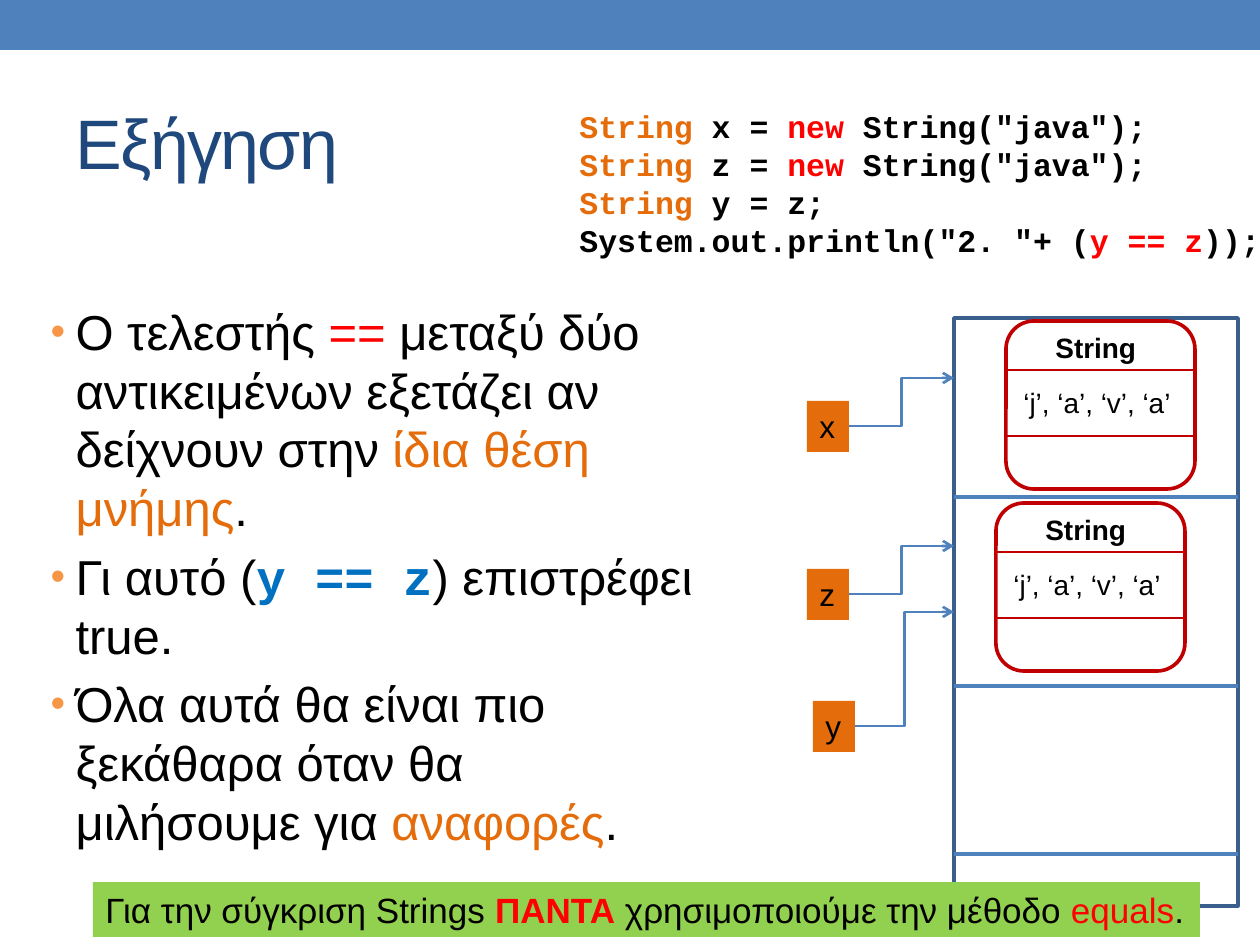
import pptx
import pptx.util
import pptx.dml.color
import pptx.enum.shapes
import pptx.enum.text
import pptx.oxml
from lxml import etree

PX = 914400 / 126
COLORS = {
    "blue": "4F81BD", "frame": "3A5F8C", "navy": "1F497D", "red": "FF0000",
    "crimson": "C00000", "orange": "E46C0A", "bullet": "F79646",
    "green": "92D050", "sky": "0070C0", "black": "000000",
}
SANS, MONO = "Arial", "Courier New"
RECTANGLE = pptx.enum.shapes.MSO_SHAPE.RECTANGLE
ROUNDED = pptx.enum.shapes.MSO_SHAPE.ROUNDED_RECTANGLE
STRAIGHT = pptx.enum.shapes.MSO_CONNECTOR.STRAIGHT
ELBOW = pptx.enum.shapes.MSO_CONNECTOR.ELBOW
LEFT = pptx.enum.text.PP_ALIGN.LEFT
TOP = pptx.enum.text.MSO_ANCHOR.TOP
MIDDLE = pptx.enum.text.MSO_ANCHOR.MIDDLE

# Content: each paragraph is a list of (text, colour[, font]) runs
TITLE = [[("Εξήγηση", "navy")]]
CODE = [
    [("String ", "orange"), ("x = ", "black"), ("new", "red"), (' String("java");', "black")],
    [("String ", "orange"), ("z = ", "black"), ("new", "red"), (' String("java");', "black")],
    [("String", "orange"), (" y = z;", "black")],
    [('System.out.println("2. "+ (', "black"), ("y == z", "red"), ("));", "black")],
]
BULLETS = [
    [("Ο τελεστής ", "black"), ("==", "red"),
     (" μεταξύ δύο αντικειμένων εξετάζει αν δείχνουν στην ", "black"),
     ("ίδια θέση μνήμης", "orange"), (".", "black")],
    [("Γι αυτό (", "black"), ("y == z", "sky", MONO), (") επιστρέφει true.", "black")],
    [("Όλα αυτά θα είναι πιο ξεκάθαρα όταν θα μιλήσουμε για ", "black"),
     ("αναφορές", "orange"), (".", "black")],
]
ADVICE = [[("Για την σύγκριση Strings ", "black"), ("ΠΑΝΤΑ", "red", SANS),
           (" χρησιμοποιούμε την μέθοδο ", "black"), ("equals", "red"), (".", "black")]]
CARD_TITLE = [[("String", "black")]]
CARD_VALUES = [[("‘j’, ‘a’, ‘v’, ‘a’", "black")]]

MEMORY = (954, 318, 284, 588)
MEMORY_ROWS = [497, 686, 854]
CARDS = [(996, 503), (1006, 321)]
# name, box left, box top, height the arrow points at
VARIABLES = [("z", 807, 569, 546), ("x", 807, 401, 378), ("y", 813, 701, 612)]


def px(*values):
    return [round(value * PX) for value in values]


def color(name):
    return pptx.dml.color.RGBColor.from_string(COLORS[name])


def write(shape, paragraphs, size, font=SANS, bold=False, wrap=True, anchor=TOP):
    frame = shape.text_frame
    frame.word_wrap = wrap
    frame.auto_size = pptx.enum.text.MSO_AUTO_SIZE.NONE
    frame.vertical_anchor = anchor
    for index, runs in enumerate(paragraphs):
        paragraph = frame.add_paragraph() if index else frame.paragraphs[0]
        paragraph.alignment = LEFT
        paragraph.font.size = pptx.util.Pt(size)
        paragraph.font.name = font
        paragraph.font.bold = bold
        for text, run_color, *emphasis in runs:
            run = paragraph.add_run()
            run.text = text
            run.font.color.rgb = color(run_color)
            if emphasis:
                run.font.name = emphasis[0]
                run.font.bold = True
    return frame


def add_box(kind, box, fill=None, line=None):
    shape = slide.shapes.add_shape(kind, *px(*box))
    shape.shadow.inherit = False
    if fill:
        shape.fill.solid()
        shape.fill.fore_color.rgb = color(fill)
    else:
        shape.fill.background()
    if line:
        shape.line.color.rgb = color(line)
        shape.line.width = pptx.util.Pt(2.08)
    else:
        shape.line.fill.background()
    return shape


def add_line(kind, start, end, line, width, arrow=False):
    connector = slide.shapes.add_connector(kind, *px(*start, *end))
    connector.line.color.rgb = color(line)
    connector.line.width = pptx.util.Pt(width)
    if arrow:
        etree.SubElement(connector.line._get_or_add_ln(),
                         pptx.oxml.ns.qn("a:tailEnd"), type="arrow")
    etree.SubElement(connector._element.spPr, pptx.oxml.ns.qn("a:effectLst"))


def add_text(box, paragraphs, size, **style):
    return write(slide.shapes.add_textbox(*px(*box)), paragraphs, size, **style)


def place(placeholder, box):
    placeholder.left, placeholder.top, placeholder.width, placeholder.height = px(*box)


presentation = pptx.Presentation()
presentation.slide_width, presentation.slide_height = px(1260, 945)
slide = presentation.slides.add_slide(presentation.slide_layouts[1])
title, body = slide.placeholders

# Top band and title
add_box(RECTANGLE, (0, 0, 1260, 50), fill="blue")
place(title, (63, 73, 1134, 136))
heading = write(title, TITLE, 40, anchor=MIDDLE)
heading.paragraphs[0].runs[0].font._element.set("spc", "-100")

# Bulleted explanation
place(body, (38, 295, 675, 591))
for paragraph in write(body, BULLETS, 28).paragraphs:
    properties = paragraph._p.get_or_add_pPr()
    indent = px(25)[0]
    properties.set("marL", str(indent))
    properties.set("indent", str(-indent))
    bullet_color = etree.Element(pptx.oxml.ns.qn("a:buClr"))
    etree.SubElement(bullet_color, pptx.oxml.ns.qn("a:srgbClr"), val=COLORS["bullet"])
    bullet_size = etree.Element(pptx.oxml.ns.qn("a:buSzPct"), val="85000")
    bullet = etree.Element(pptx.oxml.ns.qn("a:buChar"), char="•")
    for position, element in enumerate((bullet_color, bullet_size, bullet)):
        properties.insert(position, element)

# Code
add_text((567, 101, 709, 165), CODE, 18, font=MONO, bold=True, wrap=False)

# Memory column
add_box(RECTANGLE, MEMORY, line="frame")
memory_left, memory_right = MEMORY[0], MEMORY[0] + MEMORY[2]
for y in MEMORY_ROWS:
    add_line(STRAIGHT, (memory_left, y), (memory_right, y), "blue", 2.25)

# String objects
for left, top in CARDS:
    add_text((left + 37, top + 3, 110, 47), CARD_TITLE, 16, bold=True)
    add_text((left + 5, top + 58, 173, 47), CARD_VALUES, 16)
    for offset in (49, 115):
        add_line(STRAIGHT, (left, top + offset), (left + 189, top + offset), "crimson", 1.5)
    add_box(ROUNDED, (left, top, 189, 168), line="crimson")

# Variables and their references
for name, left, top, target in VARIABLES:
    variable = add_box(RECTANGLE, (left, top, 42, 51), fill="orange")
    write(variable, [[(name, "black")]], 18, wrap=False)
    add_line(ELBOW, (left + 42, top + 25), (memory_left, target), "blue", 1.5, arrow=True)

# Advice
advice = add_box(RECTANGLE, (93, 882, 1107, 55), fill="green")
write(advice, ADVICE, 20, wrap=False)

presentation.save("out.pptx")
